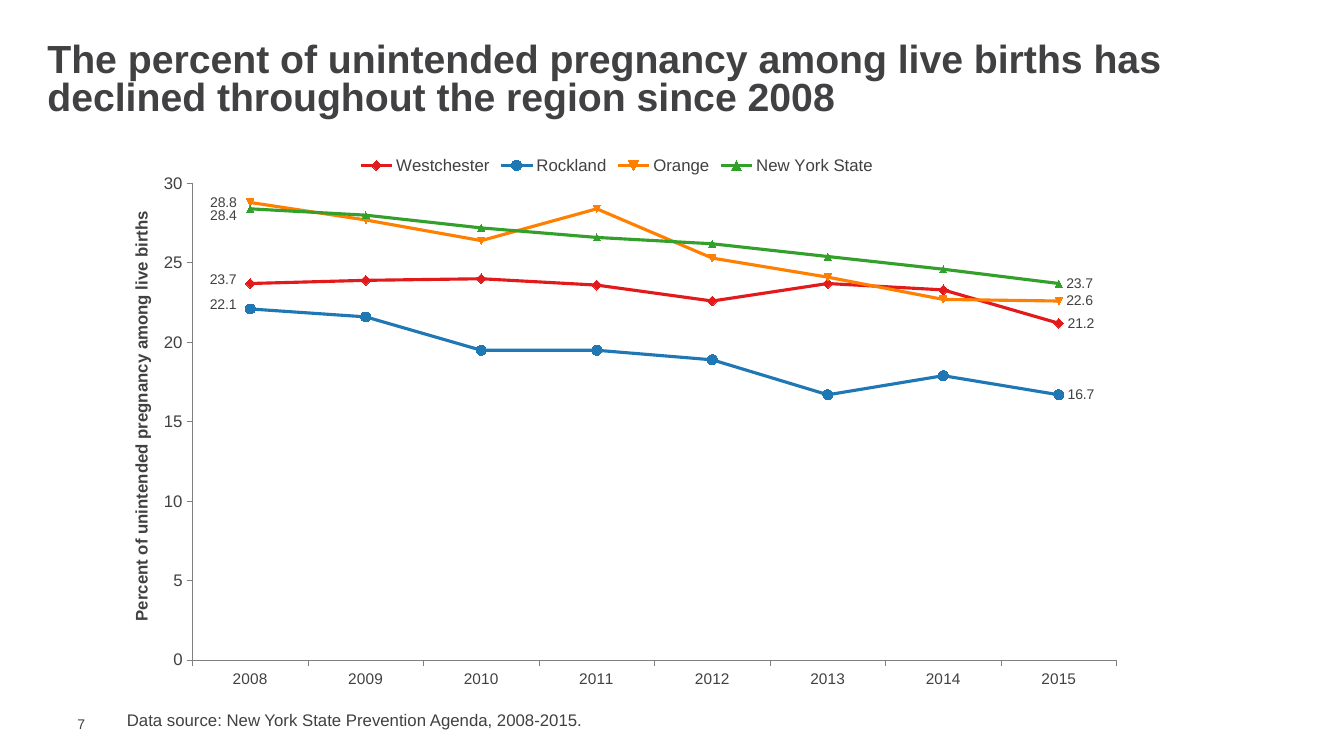
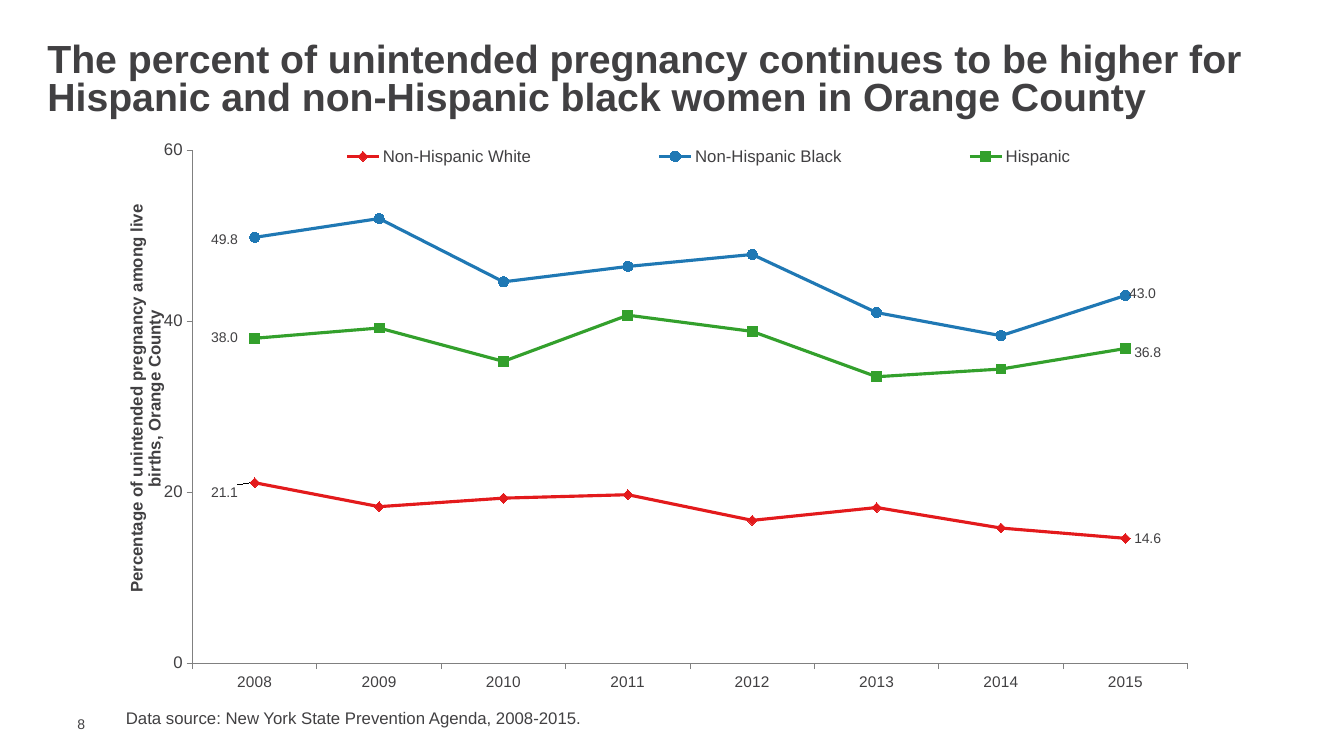
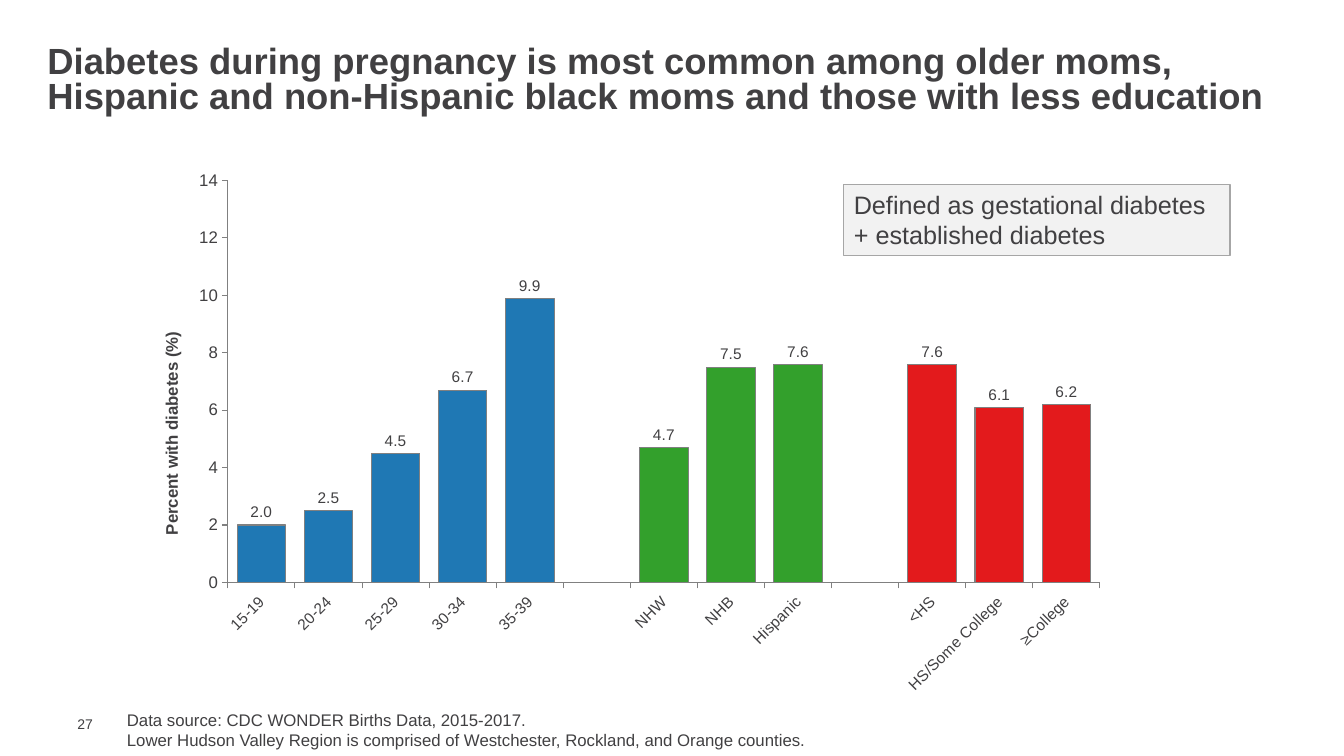
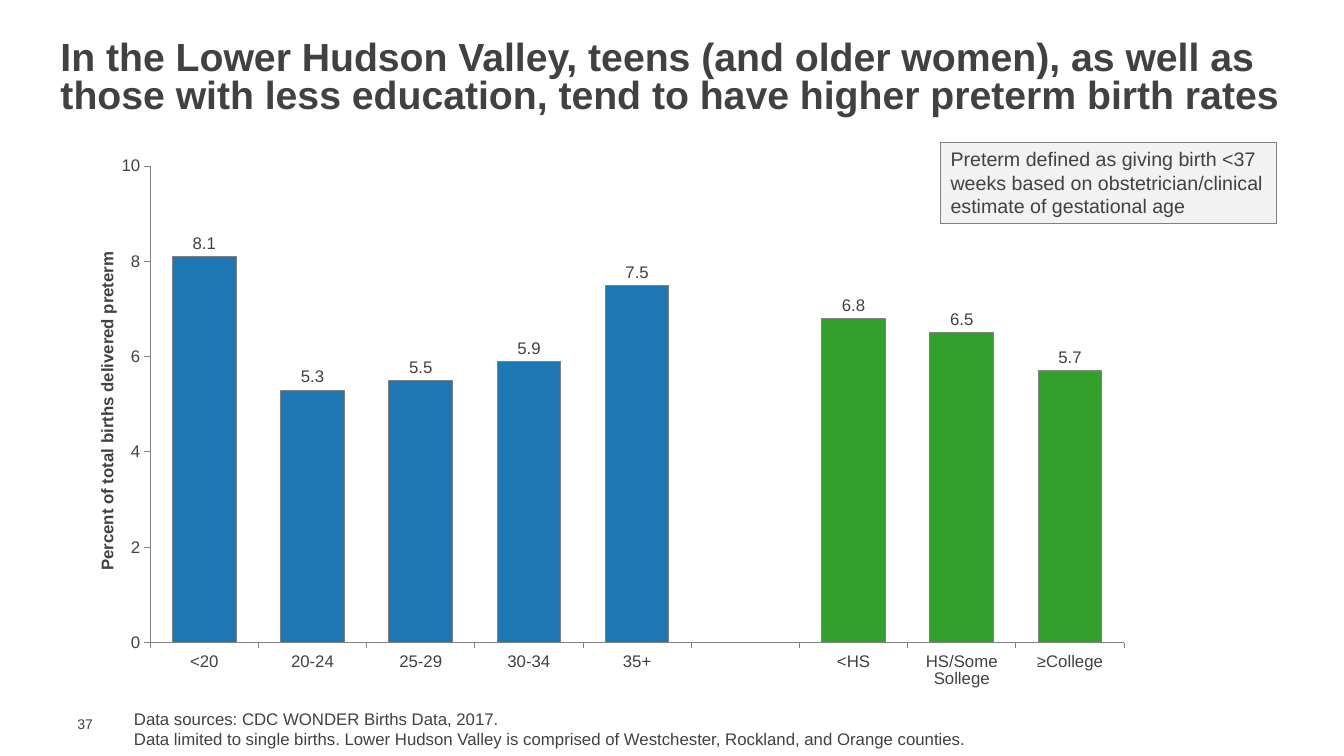
from dataclasses import dataclass
from typing import NamedTuple, Optional

from lxml.etree import Element, SubElement
from pptx import Presentation
from pptx.chart.data import CategoryChartData
from pptx.dml.color import RGBColor
from pptx.enum.chart import (XL_CHART_TYPE, XL_LABEL_POSITION, XL_LEGEND_POSITION,
                             XL_MARKER_STYLE, XL_TICK_MARK)
from pptx.enum.shapes import MSO_SHAPE
from pptx.enum.text import MSO_ANCHOR, MSO_AUTO_SIZE, PP_ALIGN
from pptx.oxml.ns import qn
from pptx.util import Pt

PX = 9144  # 100 px to the inch
FONT = "Arial"
HEX = {"ink": "414042", "axis": "808080", "edge": "A6A6A6", "note": "F2F2F2",
       "red": "E31A1C", "blue": "1F78B4", "orange": "FF7F00", "green": "33A02C"}
YEARS = [str(year) for year in range(2008, 2016)]


class Box(NamedTuple):
    left: int
    top: int
    width: int
    height: int

    def emu(self) -> list[int]:
        return [side * PX for side in self]


class Nudge(NamedTuple):
    right: int = 0
    down: int = 0


@dataclass
class Line:
    name: str
    values: list[float]
    color: str
    marker: XL_MARKER_STYLE
    size: int
    first: Nudge
    last: Nudge


@dataclass
class Graph:
    box: Box
    plot: Box
    title: str
    title_at: tuple[int, int]
    top: int
    step: int
    cat_size: int = 11
    tilt: int = 0
    format: str = "0"


@dataclass
class Note:
    box: Box
    text: str
    size: int
    edge: str


@dataclass
class Bar:
    label: str
    value: Optional[float] = None
    color: str = "blue"


TITLE_BOX = Box(37, 38, 1258, 85)
PAGE_BOX = Box(67, 710, 43, 17)


# Text and colour
def rgb(name: str) -> RGBColor:
    return RGBColor.from_string(HEX[name])


def style(font, size: int, bold: bool = False) -> None:
    font.name, font.size, font.bold = FONT, Pt(size), bold
    font.color.rgb = rgb("ink")


def write(frame, text: str, size: int, bold: bool = False) -> None:
    frame.text = text
    frame.word_wrap = True
    frame.auto_size = MSO_AUTO_SIZE.NONE
    for para in frame.paragraphs:
        para.alignment = PP_ALIGN.LEFT
        for run in para.runs:
            style(run.font, size, bold)


def outline(line, color: str, width: float = 0.75) -> None:
    line.color.rgb = rgb(color)
    line.width = Pt(width)


# Slide parts
def add_page(deck, title: str, number: int, source: str, source_at: tuple[int, int],
             size: int = 28, title_box: Box = TITLE_BOX):
    slide = deck.slides.add_slide(deck.slide_layouts[5])
    head = slide.shapes.title
    head.left, head.top, head.width, head.height = title_box.emu()
    write(head.text_frame, title, size, True)
    head.text_frame.vertical_anchor = MSO_ANCHOR.MIDDLE
    head.text_frame.paragraphs[0].line_spacing = 0.8

    page = slide.shapes.add_textbox(*PAGE_BOX.emu()).text_frame
    write(page, str(number), 10)
    page.vertical_anchor = MSO_ANCHOR.MIDDLE
    page.margin_right = page.margin_top = page.margin_bottom = 0

    height = 30 + 20 * source.count("\n")
    foot = slide.shapes.add_textbox(*Box(*source_at, 992, height).emu())
    write(foot.text_frame, source, 12)
    return slide


def add_note(slide, note: Note) -> None:
    shape = slide.shapes.add_shape(MSO_SHAPE.RECTANGLE, *note.box.emu())
    shape.shadow.inherit = False
    shape.fill.solid()
    shape.fill.fore_color.rgb = rgb("note")
    outline(shape.line, note.edge)
    write(shape.text_frame, note.text, note.size)
    shape.text_frame.vertical_anchor = MSO_ANCHOR.TOP


# Chart parts
def place(part, edge: bool = True, inner: bool = False, **sizes: float) -> None:
    """Give a chart part a manual layout, in shares of the chart."""
    old = part.find(qn("c:layout"))
    if old is not None:
        part.remove(old)
    before = {qn("c:tx"), qn("c:legendPos"), qn("c:idx")}
    layout = Element(qn("c:layout"))
    manual = SubElement(layout, qn("c:manualLayout"))
    if inner:
        SubElement(manual, qn("c:layoutTarget")).set("val", "inner")
    if edge:
        for mode in ("xMode", "yMode"):
            SubElement(manual, qn(f"c:{mode}")).set("val", "edge")
    for key, share in sizes.items():
        SubElement(manual, qn(f"c:{key}")).set("val", f"{share:.4f}")
    part.insert(sum(child.tag in before for child in part), layout)


def style_axis(axis, size: int) -> None:
    axis.has_major_gridlines = False
    axis.major_tick_mark = XL_TICK_MARK.OUTSIDE
    axis.minor_tick_mark = XL_TICK_MARK.NONE
    outline(axis.format.line, "axis")
    style(axis.tick_labels.font, size)


def add_graph(slide, kind: XL_CHART_TYPE, data: CategoryChartData, graph: Graph):
    box, plot = graph.box, graph.plot
    chart = slide.shapes.add_chart(kind, *box.emu(), data).chart
    chart.has_title = chart.has_legend = False
    style(chart.font, 10)
    chart.plots[0].vary_by_categories = False
    place(chart._chartSpace.chart.plotArea, inner=True,
          x=(plot.left - box.left) / box.width, y=(plot.top - box.top) / box.height,
          w=plot.width / box.width, h=plot.height / box.height)

    cats, vals = chart.category_axis, chart.value_axis
    style_axis(cats, graph.cat_size)
    tick_body = cats._element.find(qn("c:txPr")).find(qn("a:bodyPr"))
    tick_body.set("rot", str(graph.tilt * 60000))
    style_axis(vals, 12)
    vals.minimum_scale, vals.maximum_scale, vals.major_unit = 0, graph.top, graph.step
    vals.tick_labels.number_format = graph.format
    vals.tick_labels.number_format_is_linked = False

    title = vals.axis_title
    title.text_frame.text = graph.title
    style(title.text_frame.paragraphs[0].runs[0].font, 12, True)
    title_body = title._element.find(".//" + qn("a:bodyPr"))
    title_body.set("rot", "-5400000")
    title_body.set("vert", "horz")
    left, top = graph.title_at
    place(title._element, x=(left - box.left) / box.width, y=(top - box.top) / box.height)
    return chart


def add_lines(slide, graph: Graph, lines: list[Line]):
    data = CategoryChartData(number_format="0.0")
    data.categories = YEARS
    for line in lines:
        data.add_series(line.name, line.values)
    chart = add_graph(slide, XL_CHART_TYPE.LINE_MARKERS, data, graph)
    chart.has_legend = True
    chart.legend.position = XL_LEGEND_POSITION.TOP
    chart.legend.include_in_layout = False
    style(chart.legend.font, 12)

    for series, line in zip(chart.plots[0].series, lines):
        series.smooth = False
        outline(series.format.line, line.color, 2.25)
        series.marker.style, series.marker.size = line.marker, line.size
        series.marker.format.fill.solid()
        series.marker.format.fill.fore_color.rgb = rgb(line.color)
        outline(series.marker.format.line, line.color)
        series.data_labels.show_value = False
        ends = ((0, line.first, XL_LABEL_POSITION.LEFT),
                (len(YEARS) - 1, line.last, XL_LABEL_POSITION.RIGHT))
        for index, nudge, side in ends:
            label = series.points[index].data_label
            style(label.font, 10)
            label.position = side
            if any(nudge):
                place(label._get_or_add_dLbl(), edge=False,
                      x=nudge.right / graph.box.width, y=nudge.down / graph.box.height)
    return chart


def add_bars(slide, graph: Graph, bars: list[Bar], gap: int, size: int) -> None:
    data = CategoryChartData(number_format="0.0")
    data.categories = [bar.label for bar in bars]
    data.add_series("Series 1", [bar.value for bar in bars])
    plot = add_graph(slide, XL_CHART_TYPE.COLUMN_CLUSTERED, data, graph).plots[0]
    plot.gap_width = gap
    series = plot.series[0]
    series.format.fill.solid()
    series.format.fill.fore_color.rgb = rgb("blue")
    outline(series.format.line, "axis")
    for index, bar in enumerate(bars):
        if bar.color != "blue":
            look = series.points[index].format
            look.fill.solid()
            look.fill.fore_color.rgb = rgb(bar.color)
            outline(look.line, "axis")
    labels = series.data_labels
    labels.show_value = True
    labels.number_format, labels.number_format_is_linked = "0.0", False
    labels.position = XL_LABEL_POSITION.OUTSIDE_END
    style(labels.font, size)


# Slides
def add_region(deck) -> None:
    slide = add_page(
        deck, "The percent of unintended pregnancy among live births has declined "
        "throughout the region since 2008", 7,
        "Data source: New York State Prevention Agenda, 2008-2015.", (116, 699))
    graph = Graph(Box(116, 144, 992, 542), Box(191, 182, 917, 473),
                  "Percent of unintended pregnancy among live births", (127, 206), 30, 5)
    add_lines(slide, graph, [
        Line("Westchester", [23.7, 23.9, 24, 23.6, 22.6, 23.7, 23.3, 21.2], "red",
             XL_MARKER_STYLE.DIAMOND, 7, Nudge(-5, -4), Nudge()),
        Line("Rockland", [22.1, 21.6, 19.5, 19.5, 18.9, 16.7, 17.9, 16.7], "blue",
             XL_MARKER_STYLE.CIRCLE, 7, Nudge(-5, -4), Nudge()),
        Line("Orange", [28.8, 27.7, 26.4, 28.4, 25.3, 24.1, 22.7, 22.6], "orange",
             XL_MARKER_STYLE.AUTOMATIC, 5, Nudge(-6, 0), Nudge()),
        Line("New York State", [28.4, 28, 27.2, 26.6, 26.2, 25.4, 24.6, 23.7], "green",
             XL_MARKER_STYLE.AUTOMATIC, 5, Nudge(-6, 7), Nudge()),
    ])


def add_county(deck) -> None:
    slide = add_page(
        deck, "The percent of unintended pregnancy continues to be higher for "
        "Hispanic and non-Hispanic black women in Orange County", 8,
        "Data source: New York State Prevention Agenda, 2008-2015.", (115, 697))
    graph = Graph(Box(116, 133, 1067, 554), Box(191, 149, 987, 509),
                  "Percentage of unintended pregnancy among live births, Orange County",
                  (122, 200), 60, 20)
    chart = add_lines(slide, graph, [
        Line("Non-Hispanic White", [21.1, 18.3, 19.3, 19.7, 16.7, 18.2, 15.8, 14.6], "red",
             XL_MARKER_STYLE.DIAMOND, 7, Nudge(-8, 10), Nudge()),
        Line("Non-Hispanic Black", [49.8, 52, 44.6, 46.4, 47.8, 41, 38.3, 43], "blue",
             XL_MARKER_STYLE.CIRCLE, 7, Nudge(-8, 2), Nudge(-5, -2)),
        Line("Hispanic", [38, 39.2, 35.3, 40.7, 38.8, 33.5, 34.4, 36.8], "green",
             XL_MARKER_STYLE.SQUARE, 7, Nudge(-8, -1), Nudge(0, 4)),
    ])
    place(chart.legend._element, x=0.1, y=0.01, w=0.9, h=0.06)


def add_diabetes(deck) -> None:
    slide = add_page(
        deck, "Diabetes during pregnancy is most common among older moms, Hispanic and "
        "non-Hispanic black moms and those with less education", 27,
        "Data source: CDC WONDER Births Data, 2015-2017.\nLower Hudson Valley Region is "
        "comprised of Westchester, Rockland, and Orange counties.", (116, 699), 26)
    add_note(slide, Note(Box(837, 183, 383, 71),
                         "Defined as gestational diabetes + established diabetes", 18, "edge"))
    graph = Graph(Box(133, 158, 978, 541), Box(226, 179, 865, 399),
                  "Percent with diabetes (%)", (157, 326), 14, 2, tilt=-45)
    add_bars(slide, graph, [
        Bar("15-19", 2), Bar("20-24", 2.5), Bar("25-29", 4.5), Bar("30-34", 6.7),
        Bar("35-39", 9.9), Bar(""),
        Bar("NHW", 4.7, "green"), Bar("NHB", 7.5, "green"), Bar("Hispanic", 7.6, "green"),
        Bar(""),
        Bar("<HS", 7.6, "red"), Bar("HS/Some College", 6.1, "red"), Bar("≥College", 6.2, "red"),
    ], gap=38, size=11)


def add_preterm(deck) -> None:
    slide = add_page(
        deck, "In the Lower Hudson Valley, teens (and older women), as well as those with "
        "less education, tend to have higher preterm birth rates", 37,
        "Data sources: CDC WONDER Births Data, 2017.\nData limited to single births. Lower "
        "Hudson Valley is comprised of Westchester, Rockland, and Orange counties.",
        (123, 698), title_box=Box(50, 17, 1250, 123))
    graph = Graph(Box(83, 150, 1033, 533), Box(149, 165, 966, 473),
                  "Percent of total births delivered preterm", (93, 247), 10, 2,
                  cat_size=12, format="#,##0")
    add_bars(slide, graph, [
        Bar("<20", 8.1), Bar("20-24", 5.3), Bar("25-29", 5.5), Bar("30-34", 5.9),
        Bar("35+", 7.5), Bar(""),
        Bar("<HS", 6.8, "green"), Bar("HS/Some Sollege", 6.5, "green"),
        Bar("≥College", 5.7, "green"),
    ], gap=70, size=12)
    add_note(slide, Note(Box(933, 141, 333, 81),
                         "Preterm defined as giving birth <37 weeks based on "
                         "obstetrician/clinical estimate of gestational age", 14, "axis"))


def main() -> None:
    deck = Presentation()
    deck.slide_width, deck.slide_height = 1333 * PX, 750 * PX
    for add in (add_region, add_county, add_diabetes, add_preterm):
        add(deck)
    deck.save("out.pptx")


if __name__ == "__main__":
    main()
